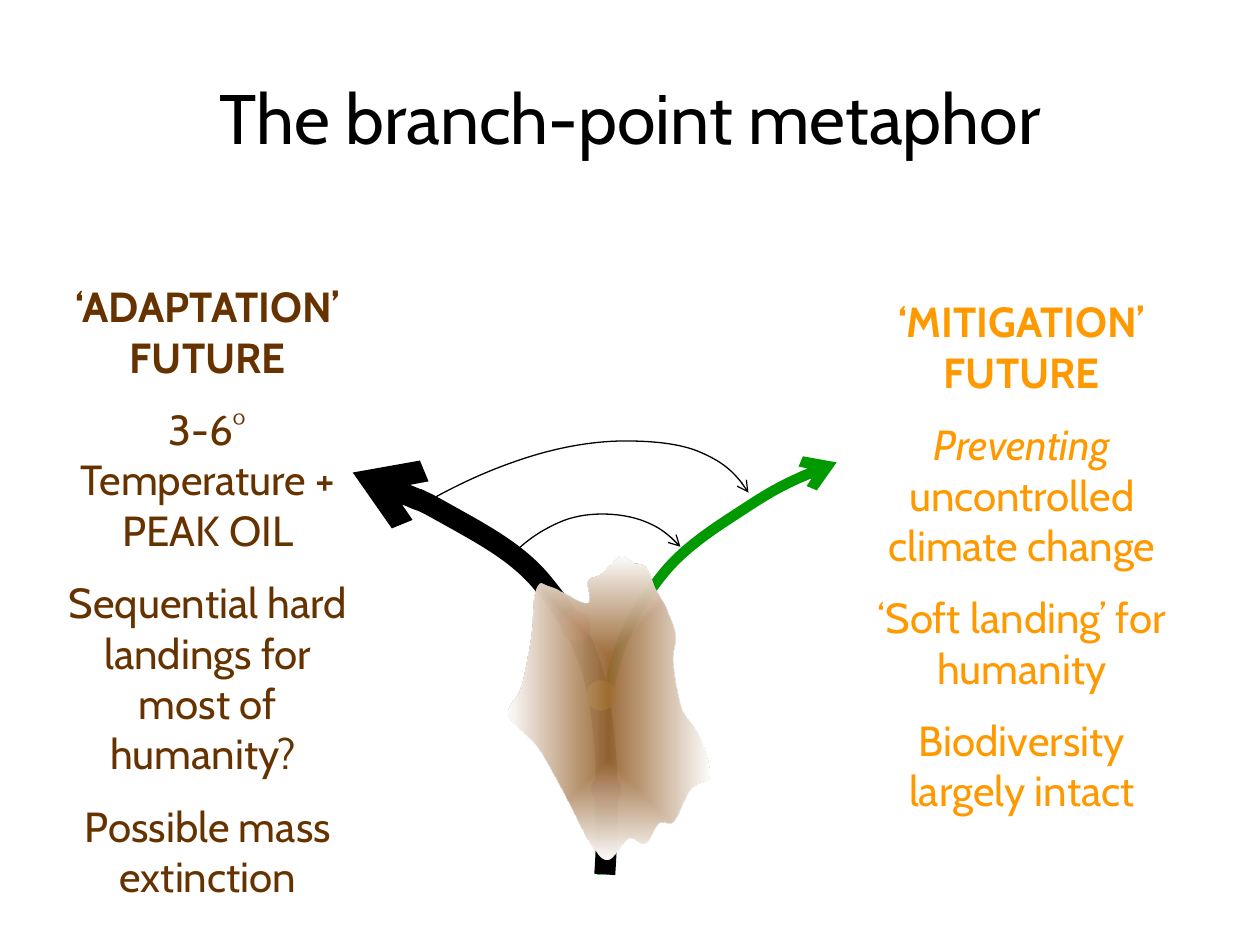
from dataclasses import dataclass

import lxml.etree
import pptx
import pptx.dml.color
import pptx.enum.shapes
import pptx.enum.text
import pptx.oxml.ns
import pptx.util

qn = pptx.oxml.ns.qn
Point = tuple[float, float]

# The slide is a fine grid; every length below is a count of its cells.
COLUMNS, ROWS = 1000, 750
CELL = pptx.util.Inches(0.01)


@dataclass(frozen=True)
class Theme:
    font: str = "Cabin"
    title_size: int = 40
    body_size: int = 24
    paragraph_gap: float = 12.5
    black: str = "000000"
    adaptation: str = "663300"
    mitigation: str = "FF9900"
    green: str = "009900"
    cloud_center: str = "996633"
    cloud_edge: str = "FFFFFF"


@dataclass(frozen=True)
class Run:
    text: str
    bold: bool = False
    italic: bool = False


@dataclass(frozen=True)
class Column:
    box: tuple[int, int, int, int]
    color: str
    paragraphs: list[list[Run]]


@dataclass(frozen=True)
class Arrow:
    points: list[Point]
    color: str
    width: float


@dataclass(frozen=True)
class Dot:
    left: int
    top: int
    color: str


THEME = Theme()
DOT_SIZE = 24

COLUMN_TEXTS = [
    Column((681, 230, 260, 434), THEME.mitigation, [
        [Run("‘MITIGATION’ FUTURE", bold=True)],
        [Run("Preventing", italic=True), Run(" uncontrolled climate change")],
        [Run("‘Soft landing’ for humanity")],
        [Run("Biodiversity largely intact")],
    ]),
    Column((35, 218, 260, 535), THEME.adaptation, [
        [Run("‘ADAPTATION’ FUTURE", bold=True)],
        [Run("3-6° Temperature + PEAK OIL")],
        [Run("Sequential hard landings for most of humanity? ")],
        [Run("Possible mass extinction")],
    ]),
]

# Each outline is a smooth curve through its points.
BRANCHES = [
    Arrow([(478, 694), (484, 544), (525, 457), (592, 403), (664, 367)], THEME.green, 6),
    Arrow([(480, 694), (474, 548), (430, 462), (358, 410), (280, 375)], THEME.black, 12),
]
CROSSINGS = [
    Arrow([(343, 396), (422, 362), (496, 350), (556, 359), (594, 391)], THEME.black, 0.75),
    Arrow([(412, 435), (443, 415), (478, 408), (512, 414), (540, 434)], THEME.black, 0.75),
]
DOTS = [Dot(465, 540, "FFFF00"), Dot(469, 615, "800080"), Dot(445, 485, "FF3300")]
CLOUD = [
    (513, 451), (521, 469), (530, 486), (536, 504), (534, 526), (540, 560), (554, 583),
    (563, 615), (548, 626), (535, 651), (523, 653), (512, 669), (499, 665), (483, 682),
    (470, 671), (454, 641), (438, 611), (424, 589), (404, 567), (414, 545), (422, 505),
    (426, 467), (438, 466), (466, 479), (467, 461), (477, 456), (492, 442), (503, 447),
]


def rgb(color: str) -> pptx.dml.color.RGBColor:
    return pptx.dml.color.RGBColor.from_string(color)


def add_text(slide, box, paragraphs: list[list[Run]], *, size: int, color: str,
             anchor=pptx.enum.text.MSO_ANCHOR.TOP,
             auto_size=pptx.enum.text.MSO_AUTO_SIZE.NONE) -> None:
    frame = slide.shapes.add_textbox(*(length * CELL for length in box)).text_frame
    frame.word_wrap = True
    frame.auto_size = auto_size
    frame.vertical_anchor = anchor
    for index, runs in enumerate(paragraphs):
        paragraph = frame.add_paragraph() if index else frame.paragraphs[0]
        paragraph.alignment = pptx.enum.text.PP_ALIGN.CENTER
        paragraph.space_before = pptx.util.Pt(THEME.paragraph_gap if index else 0)
        for item in runs:
            run = paragraph.add_run()
            run.text = item.text
            run.font.name = THEME.font
            run.font.size = pptx.util.Pt(size)
            run.font.bold = item.bold
            run.font.italic = item.italic
            run.font.color.rgb = rgb(color)


def extend(a: Point, b: Point, c: Point) -> Point:
    """Continue the parabola through c, b and a by one point."""
    return 3 * a[0] - 3 * b[0] + c[0], 3 * a[1] - 3 * b[1] + c[1]


def bezier_points(points: list[Point], close: bool) -> list[Point]:
    """Return control, control and end points of a Catmull-Rom spline."""
    if close:
        path = [points[-1], *points, *points[:2]]
    else:
        path = [extend(*points[:3]), *points, extend(*points[:-4:-1])]
    result = []
    for before, start, end, after in zip(path, path[1:], path[2:], path[3:]):
        result += [
            tuple(s + (e - b) / 6 for b, s, e in zip(before, start, end)),
            tuple(e - (a - s) / 6 for s, e, a in zip(start, end, after)),
            end,
        ]
    return result


def add_curve(slide, points: list[Point], *, close: bool = False):
    builder = slide.shapes.build_freeform(*points[0], scale=CELL)
    builder.add_line_segments(bezier_points(points, close), close=close)
    shape = builder.convert_to_shape()
    shape.shadow.inherit = False
    segments = list(shape._element.iter(qn("a:lnTo")))
    for start in range(0, len(segments), 3):
        first, *others = segments[start:start + 3]
        first.tag = qn("a:cubicBezTo")
        for segment in others:
            first.append(segment[0])
            segment.getparent().remove(segment)
    return shape


def add_arrow(slide, arrow: Arrow) -> None:
    shape = add_curve(slide, arrow.points)
    shape.fill.background()
    shape.line.color.rgb = rgb(arrow.color)
    shape.line.width = pptx.util.Pt(arrow.width)
    outline = shape._element.spPr.find(qn("a:ln"))
    lxml.etree.SubElement(outline, qn("a:tailEnd"), type="arrow")


def add_dot(slide, dot: Dot) -> None:
    shape = slide.shapes.add_shape(
        pptx.enum.shapes.MSO_SHAPE.OVAL,
        *(length * CELL for length in (dot.left, dot.top, DOT_SIZE, DOT_SIZE)))
    shape.shadow.inherit = False
    shape.fill.solid()
    shape.fill.fore_color.rgb = rgb(dot.color)
    shape.line.fill.background()


def add_cloud(slide) -> None:
    """Add the haze over the branch point, fading outwards from its centre."""
    shape = add_curve(slide, CLOUD, close=True)
    shape.line.fill.background()
    shape.fill.gradient()
    colors = (THEME.cloud_center, THEME.cloud_edge)
    for position, (stop, color) in enumerate(zip(shape.fill.gradient_stops, colors)):
        stop.position = position
        stop.color.rgb = rgb(color)
    gradient = shape._element.spPr.find(qn("a:gradFill"))
    center_color = next(gradient.iter(qn("a:srgbClr")))
    lxml.etree.SubElement(center_color, qn("a:alpha"), val="95000")
    gradient.remove(gradient.find(qn("a:lin")))
    shading = lxml.etree.SubElement(gradient, qn("a:path"), path="rect")
    middle = dict.fromkeys("ltrb", "50000")
    lxml.etree.SubElement(shading, qn("a:fillToRect"), middle)


def main() -> None:
    presentation = pptx.Presentation()
    presentation.slide_width = COLUMNS * CELL
    presentation.slide_height = ROWS * CELL
    slide = presentation.slides.add_slide(presentation.slide_layouts[6])
    add_text(slide, (50, 30, 900, 125), [[Run("The branch-point metaphor")]],
             size=THEME.title_size, color=THEME.black, anchor=pptx.enum.text.MSO_ANCHOR.MIDDLE)
    for arrow in BRANCHES:
        add_arrow(slide, arrow)
    for column in COLUMN_TEXTS:
        add_text(slide, column.box, column.paragraphs, size=THEME.body_size, color=column.color,
                 auto_size=pptx.enum.text.MSO_AUTO_SIZE.SHAPE_TO_FIT_TEXT)
    for arrow in CROSSINGS:
        add_arrow(slide, arrow)
    for dot in DOTS:
        add_dot(slide, dot)
    add_cloud(slide)
    presentation.save("out.pptx")


if __name__ == "__main__":
    main()
